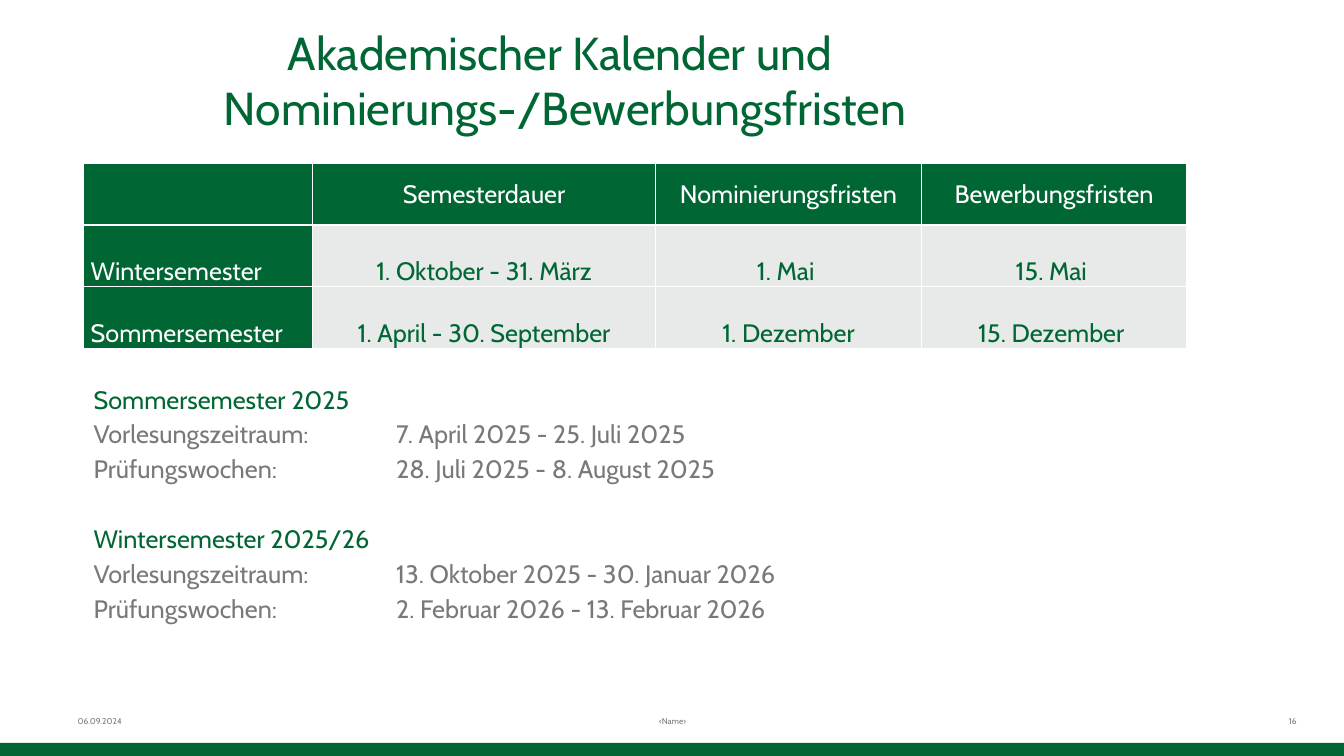
from dataclasses import dataclass

from lxml.etree import SubElement
from pptx import Presentation
from pptx.dml.color import RGBColor
from pptx.enum.shapes import MSO_SHAPE
from pptx.enum.text import MSO_ANCHOR, PP_ALIGN
from pptx.oxml import parse_xml
from pptx.oxml.ns import nsdecls, qn
from pptx.util import Inches, Pt


@dataclass(frozen=True)
class Theme:
    font: str = "Cabin"
    green: str = "006633"
    gray: str = "797979"
    pale: str = "E7EAE8"
    white: str = "FFFFFF"
    title_size: int = 33
    text_size: int = 18
    footer_size: int = 6


THEME = Theme()
WIDTH, HEIGHT = Inches(13.33), Inches(7.5)
LEFT_MARGIN = 6.23
FOOTER_TOP, FOOTER_HEIGHT = 92.67, 5.33
TABLE_TOP, ROW_HEIGHT = 21.6, 8.17
COLUMN_WIDTHS = (17.03, 25.51, 19.8, 19.73)
DATE_TAB = Inches(3)

DEADLINES = (
    ("", "Semesterdauer", "Nominierungsfristen", "Bewerbungsfristen"),
    ("Wintersemester", "1. Oktober - 31. März", "1. Mai ", "15. Mai "),
    ("Sommersemester", "1. April - 30. September", "1. Dezember", "15. Dezember "),
)
SEMESTERS = (
    ("Sommersemester 2025", "7. April 2025 - 25. Juli 2025", "28. Juli 2025 - 8. August 2025"),
    ("Wintersemester 2025/26", "13. Oktober 2025 - 30. Januar 2026", "2. Februar 2026 - 13. Februar 2026"),
)


def across(share):
    return round(WIDTH * share / 100)


def down(share):
    return round(HEIGHT * share / 100)


def area(left, top, width, height):
    return across(left), down(top), across(width), down(height)


def write(paragraph, text, *, size=THEME.text_size, color=THEME.gray,
          align=PP_ALIGN.LEFT, before=0, tab=None):
    if tab:
        stops = SubElement(paragraph._p.get_or_add_pPr(), qn("a:tabLst"))
        SubElement(stops, qn("a:tab"), pos=str(tab), algn="l")
    paragraph.text = text
    paragraph.alignment = align
    paragraph.space_before = Pt(before)
    for run in paragraph.runs:
        run.font.name = THEME.font
        run.font.size = Pt(size)
        run.font.bold = False
        run.font.color.rgb = RGBColor.from_string(color)


def add_frame(slide, box, insets=(7.2, 3.6, 7.2, 3.6), anchor=MSO_ANCHOR.TOP):
    frame = slide.shapes.add_textbox(*area(*box)).text_frame
    frame.word_wrap = True
    frame.vertical_anchor = anchor
    (frame.margin_left, frame.margin_top,
     frame.margin_right, frame.margin_bottom) = map(Pt, insets)
    return frame


def add_title(slide, text):
    frame = add_frame(slide, (2.18, 3.2, 79.74, 16.67), (7.2, 0, 7.2, 3.6))
    write(frame.paragraphs[0], text, size=THEME.title_size,
          color=THEME.green, align=PP_ALIGN.CENTER)


def add_footer(slide, text, left, width, align, insets):
    frame = add_frame(slide, (left, FOOTER_TOP, width, FOOTER_HEIGHT),
                      insets, MSO_ANCHOR.MIDDLE)
    write(frame.paragraphs[0], text, size=THEME.footer_size, align=align)


def add_bottom_bar(slide):
    bar = slide.shapes.add_shape(MSO_SHAPE.RECTANGLE, *area(0, 98.27, 100, 1.73))
    bar.shadow.inherit = False
    bar.fill.solid()
    bar.fill.fore_color.rgb = RGBColor.from_string(THEME.green)
    bar.line.fill.background()


def add_borders(cell):
    properties = cell._tc.get_or_add_tcPr()
    for position, side in enumerate("LRTB"):
        properties.insert(position, parse_xml(
            f'<a:ln{side} {nsdecls("a")} w="{Pt(1)}"><a:solidFill>'
            f'<a:srgbClr val="{THEME.white}"/></a:solidFill></a:ln{side}>'))


def fill_cell(cell, text, is_header, is_label):
    emphasised = is_header or is_label
    cell.fill.solid()
    cell.fill.fore_color.rgb = RGBColor.from_string(
        THEME.green if emphasised else THEME.pale)
    cell.margin_left = cell.margin_right = Pt(5)
    cell.margin_top = cell.margin_bottom = 0
    cell.vertical_anchor = MSO_ANCHOR.MIDDLE if is_header else MSO_ANCHOR.BOTTOM
    write(cell.text_frame.paragraphs[0], text,
          color=THEME.white if emphasised else THEME.green,
          align=PP_ALIGN.LEFT if is_label else PP_ALIGN.CENTER)
    add_borders(cell)


def add_deadlines(slide):
    box = (LEFT_MARGIN, TABLE_TOP, sum(COLUMN_WIDTHS), ROW_HEIGHT * len(DEADLINES))
    table = slide.shapes.add_table(
        len(DEADLINES), len(COLUMN_WIDTHS), *area(*box)).table
    for column, width in zip(table.columns, COLUMN_WIDTHS):
        column.width = across(width)
    for row_index, entries in enumerate(DEADLINES):
        table.rows[row_index].height = down(ROW_HEIGHT)
        for column_index, entry in enumerate(entries):
            fill_cell(table.cell(row_index, column_index), entry,
                      row_index == 0, column_index == 0)


def add_semesters(slide):
    frame = add_frame(slide, (LEFT_MARGIN, 50.13, 91.45, 40.13))
    for index, (semester, lectures, exams) in enumerate(SEMESTERS):
        heading = frame.add_paragraph() if index else frame.paragraphs[0]
        write(heading, semester, color=THEME.green, before=28.5 if index else 0)
        for label, dates in (("Vorlesungszeitraum:", lectures), ("Prüfungswochen:", exams)):
            write(frame.add_paragraph(), f"{label}\t{dates}", before=3.25, tab=DATE_TAB)


def main():
    deck = Presentation()
    deck.slide_width, deck.slide_height = WIDTH, HEIGHT
    slide = deck.slides.add_slide(deck.slide_layouts[6])
    add_footer(slide, "‹Name›", 34.21, 31.66, PP_ALIGN.CENTER, (5, 3, 5, 3))
    add_bottom_bar(slide)
    add_title(slide, "Akademischer Kalender und \nNominierungs-/Bewerbungsfristen")
    add_footer(slide, "06.09.2024", 5.03, 23.33, PP_ALIGN.LEFT, (7.2, 3.6, 7.2, 3.6))
    add_footer(slide, "16", 73.14, 23.33, PP_ALIGN.RIGHT, (7.2, 3.6, 0, 3.6))
    add_semesters(slide)
    add_deadlines(slide)
    deck.save("out.pptx")


if __name__ == "__main__":
    main()
